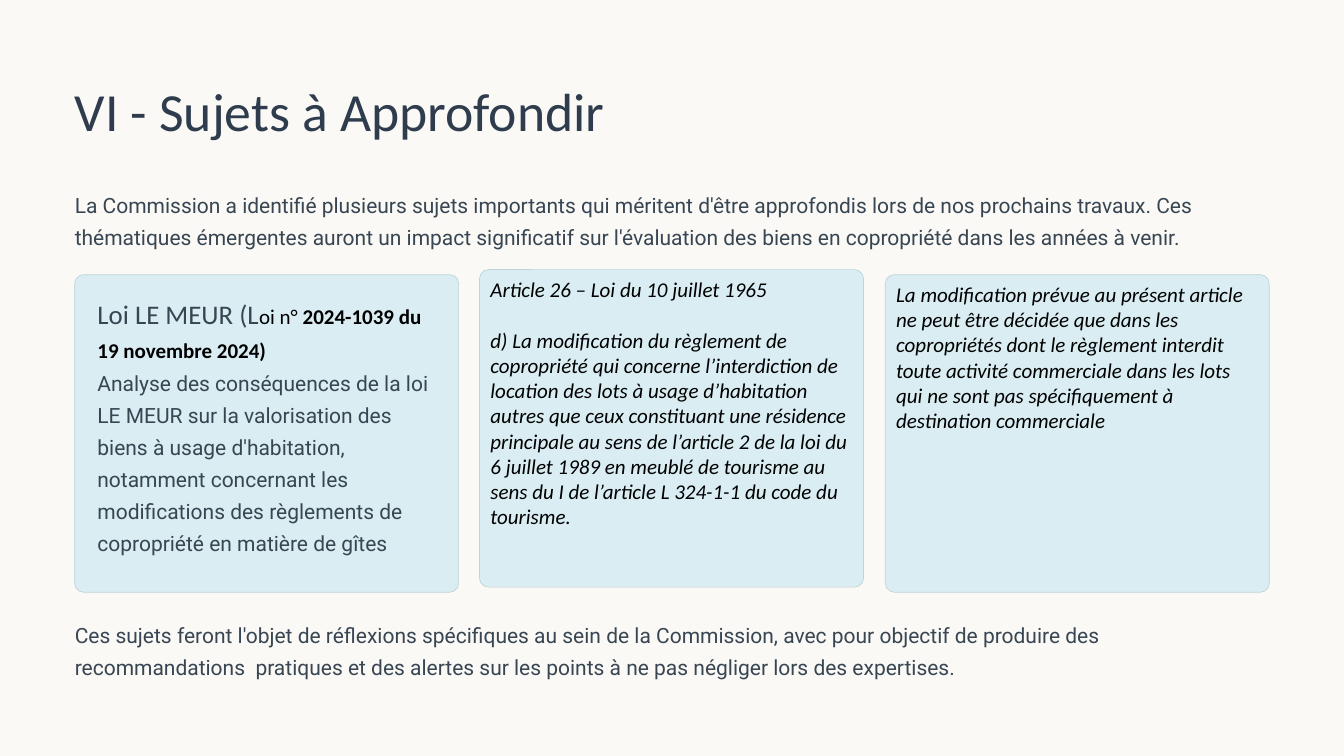
from dataclasses import dataclass

from pptx import Presentation
from pptx.dml.color import RGBColor
from pptx.enum.shapes import MSO_SHAPE
from pptx.enum.text import MSO_ANCHOR, MSO_AUTO_SIZE, PP_ALIGN
from pptx.slide import Slide
from pptx.text.text import TextFrame
from pptx.util import Inches, Pt

CREAM = RGBColor(0xFA, 0xF9, 0xF5)
NAVY = RGBColor(0x2E, 0x3C, 0x4E)
SLATE = RGBColor(0x38, 0x46, 0x53)
BLACK = RGBColor(0, 0, 0)
CARD_FILL = RGBColor(0xD9, 0xED, 0xF2)
CARD_LINE = RGBColor(0xBF, 0xD3, 0xD8)

LEFT, FULL_WIDTH = 0.89, 14.21
CARD_WIDTH, CARD_HEIGHT = 4.57, 3.78


@dataclass
class Body:
    left: float
    top: float
    width: float
    height: float
    text: str


@dataclass
class Card:
    left: float
    top: float
    paragraphs: tuple[str, ...] = ()


BODIES = (
    Body(LEFT, 2.21, FULL_WIDTH, 0.77,
         "La Commission a identifié plusieurs sujets importants qui méritent d'être "
         "approfondis lors de nos prochains travaux. Ces thématiques émergentes auront un "
         "impact significatif sur l'évaluation des biens en copropriété dans les années à venir."),
    Body(1.16, 4.33, 4.04, 2.05,
         "Analyse des conséquences de la loi LE MEUR sur la valorisation des biens à usage "
         "d'habitation, notamment concernant les modifications des règlements de copropriété "
         "en matière de gîtes"),
    Body(LEFT, 7.33, FULL_WIDTH, 0.77,
         "Ces sujets feront l'objet de réflexions spécifiques au sein de la Commission, avec "
         "pour objectif de produire des recommandations  pratiques et des alertes sur les "
         "points à ne pas négliger lors des expertises."),
)

CARDS = (
    Card(LEFT, 3.27),
    Card(5.71, 3.21, (
        "Article 26 – Loi du 10 juillet 1965",
        "d) La modification du règlement de copropriété qui concerne l’interdiction de "
        "location des lots à usage d’habitation autres que ceux constituant une résidence "
        "principale au sens de l’article 2 de la loi du 6 juillet 1989 en meublé de tourisme "
        "au sens du I de l’article L 324-1-1 du code du tourisme.")),
    Card(10.54, 3.27, (
        "La modification prévue au présent article ne peut être décidée que dans les "
        "copropriétés dont le règlement interdit toute activité commerciale dans les lots "
        "qui ne sont pas spécifiquement à destination commerciale",)),
)


def clear_frame(tf: TextFrame) -> None:
    """Wrap from the top left corner, without margins."""
    tf.word_wrap = True
    tf.auto_size = MSO_AUTO_SIZE.NONE
    tf.vertical_anchor = MSO_ANCHOR.TOP
    tf.margin_left = tf.margin_top = tf.margin_right = tf.margin_bottom = 0


def add_frame(s: Slide, left: float, top: float, width: float, height: float) -> TextFrame:
    tf = s.shapes.add_textbox(Inches(left), Inches(top), Inches(width), Inches(height)).text_frame
    clear_frame(tf)
    return tf


def set_title(s: Slide) -> None:
    title = s.shapes.title
    title.left, title.top = Inches(LEFT), Inches(0.9)
    title.width, title.height = Inches(7.27), Inches(0.8)
    clear_frame(title.text_frame)
    p = title.text_frame.paragraphs[0]
    p.text = "VI - Sujets à Approfondir"
    p.alignment = PP_ALIGN.LEFT
    p.line_spacing = Pt(57.5)
    p.font.name, p.font.size = "Calibri", Pt(46)
    p.font.color.rgb = NAVY


def add_card(s: Slide, card: Card) -> None:
    sp = s.shapes.add_shape(MSO_SHAPE.ROUNDED_RECTANGLE, Inches(card.left), Inches(card.top),
                            Inches(CARD_WIDTH), Inches(CARD_HEIGHT))
    sp.adjustments[0] = 0.028
    sp.shadow.inherit = False
    sp.fill.solid()
    sp.fill.fore_color.rgb = CARD_FILL
    sp.line.color.rgb = CARD_LINE
    sp.line.width = Pt(0.6)
    tf = sp.text_frame
    tf.word_wrap = True
    tf.vertical_anchor = MSO_ANCHOR.TOP
    for i, text in enumerate(card.paragraphs):
        p = tf.add_paragraph() if i else tf.paragraphs[0]
        p.text = text
        p.alignment = PP_ALIGN.LEFT
        if i:
            p.space_before = Pt(22)
        p.font.name, p.font.size, p.font.italic = "Calibri", Pt(18), True
        p.font.color.rgb = BLACK


def add_law_heading(s: Slide) -> None:
    tf = add_frame(s, 1.16, 3.53, 4.04, 0.8)
    lines = (
        (("Loi LE MEUR (L", 23, SLATE, False), ("oi n° ", 18, BLACK, False),
         ("2024-1039 du", 18, BLACK, True)),
        (("19 novembre 2024)", 18, BLACK, True),),
    )
    for i, runs in enumerate(lines):
        p = tf.add_paragraph() if i else tf.paragraphs[0]
        p.line_spacing = Pt(28.5)
        p.font.name = "Calibri"
        for text, size, color, bold in runs:
            r = p.add_run()
            r.text = text
            r.font.size, r.font.bold = Pt(size), bold
            r.font.color.rgb = color


def add_body(s: Slide, body: Body) -> None:
    p = add_frame(s, body.left, body.top, body.width, body.height).paragraphs[0]
    p.text = body.text
    p.line_spacing = Pt(27.5)
    p.font.name, p.font.size = "Roboto", Pt(18)
    p.font.color.rgb = SLATE


def main() -> None:
    prs = Presentation()
    prs.slide_width, prs.slide_height = Inches(16), Inches(9)
    s = prs.slides.add_slide(prs.slide_layouts[5])
    s.background.fill.solid()
    s.background.fill.fore_color.rgb = CREAM
    set_title(s)
    for card in CARDS:
        add_card(s, card)
    add_law_heading(s)
    for body in BODIES:
        add_body(s, body)
    prs.save("out.pptx")


if __name__ == "__main__":
    main()
